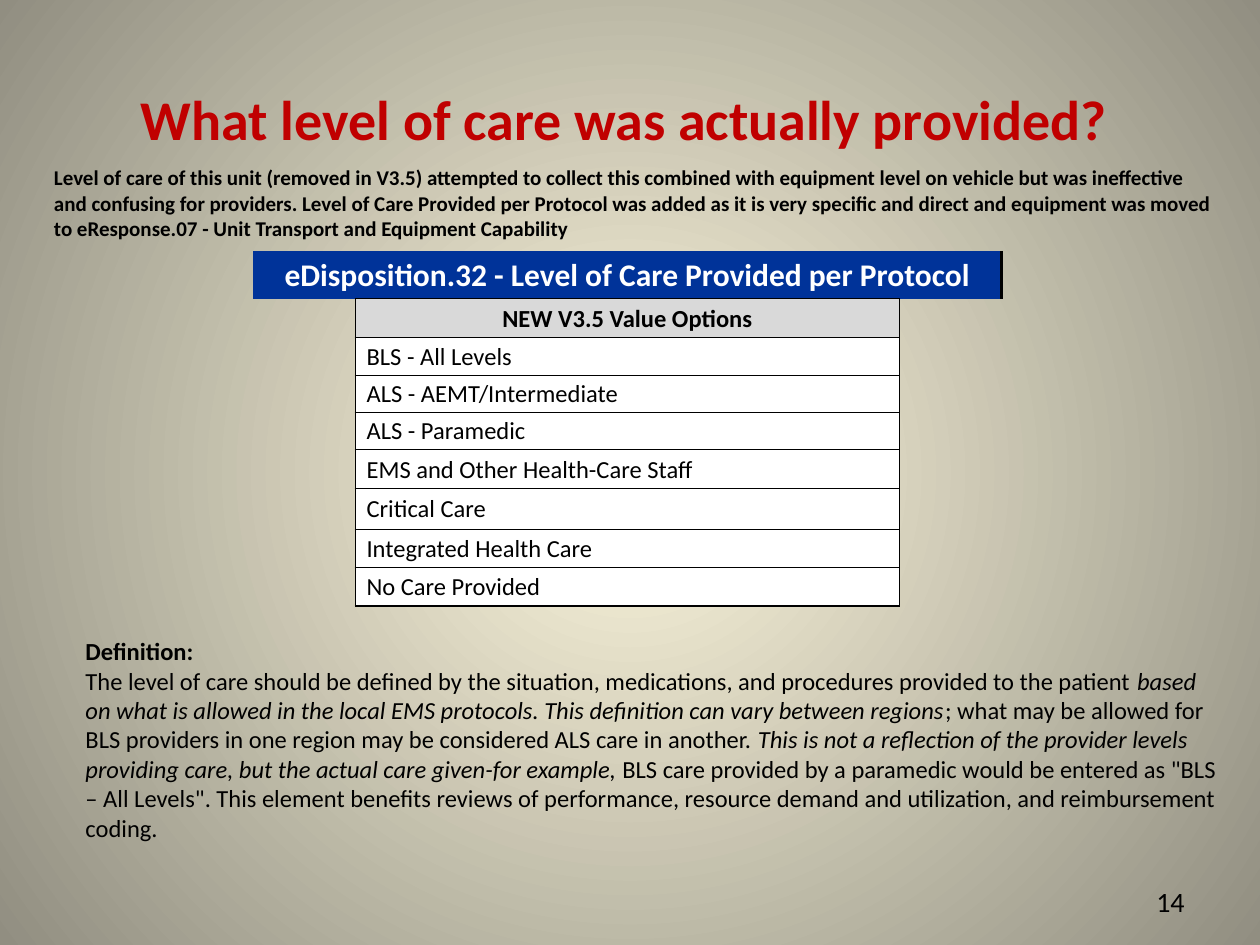
"""Build the slide on the level of care provided per protocol."""
from lxml import etree
from pptx import Presentation
from pptx.dml.color import RGBColor
from pptx.enum import text
from pptx.oxml import ns
from pptx.util import Inches, Pt

COLORS = {
    "center": "FCF7DD",
    "edge": "918E81",
    "title": "C00000",
    "text": "000000",
    "banner": "003399",
    "heading": "D9D9D9",
    "white": "FFFFFF",
}


def add_text(box, paragraphs, size, color="text", bold=False, align=text.PP_ALIGN.LEFT, wrap=True):
    """Add a text box; each paragraph is a list of runs, and every second run is italic."""
    frame = slide.shapes.add_textbox(*map(Inches, box)).text_frame
    frame.word_wrap = wrap
    for index, runs in enumerate(paragraphs):
        paragraph = frame.add_paragraph() if index else frame.paragraphs[0]
        paragraph.alignment = align
        paragraph.font.name = "Calibri"
        paragraph.font.size = Pt(size)
        paragraph.font.bold = bold
        paragraph.font.color.rgb = RGBColor.from_string(COLORS[color])
        for position, words in enumerate(runs):
            run = paragraph.add_run()
            run.text = words
            if position % 2:
                run.font.italic = True
    return frame


def set_borders(cell, **widths):
    """Draw black borders on the sides given as L, R, T or B, with widths in points."""
    properties = cell._tc.get_or_add_tcPr()
    sides = [side for side in "LRTB" if side in widths]
    for index, side in enumerate(sides):
        line = etree.Element(ns.qn(f"a:ln{side}"), w=str(Pt(widths[side])))
        fill = etree.SubElement(line, ns.qn("a:solidFill"))
        etree.SubElement(fill, ns.qn("a:srgbClr"), val=COLORS["text"])
        properties.insert(index, line)


presentation = Presentation()
presentation.slide_width, presentation.slide_height = Inches(10), Inches(7.5)
slide = presentation.slides.add_slide(presentation.slide_layouts[6])

background = slide.background.fill
background.gradient()
for stop, name in zip(background.gradient_stops, ("center", "edge")):
    stop.color.rgb = RGBColor.from_string(COLORS[name])
gradient = slide._element.find(".//" + ns.qn("a:gradFill"))
gradient.remove(gradient.find(ns.qn("a:lin")))
circle = etree.SubElement(gradient, ns.qn("a:path"), path="circle")
etree.SubElement(circle, ns.qn("a:fillToRect"), l="50000", t="50000", r="50000", b="50000")

number = add_text((7.17, 6.97, 2.33, 0.37), [["14"]], 16, align=text.PP_ALIGN.RIGHT)
number.vertical_anchor = text.MSO_ANCHOR.MIDDLE

definition = add_text((0.58, 5, 9.25, 1.75), [
    ["Definition:"],
    [
        "The level of care should be defined by the situation, medications, and procedures "
        "provided to the patient ",
        "based on what is allowed in the local EMS protocols. This definition can vary "
        "between regions",
        "; what may be allowed for BLS providers in one region may be considered ALS care "
        "in another. ",
        "This is not a reflection of the provider levels providing care, but the actual "
        "care given-for example,",
        " BLS care provided by a paramedic would be entered as \"BLS – All Levels\". This "
        "element benefits reviews of performance, resource demand and utilization, and "
        "reimbursement coding.",
    ],
], 14)
definition.paragraphs[0].font.bold = True

add_text((1.02, 0.62, 7.94, 0.64), [["What level of care was actually provided?"]], 32,
         color="title", bold=True, wrap=False)
add_text((0.33, 1.26, 9.42, 0.91), [[
    "Level of care of this unit (removed in V3.5) attempted to collect this combined with "
    "equipment level on vehicle but was ineffective and confusing for providers. Level of "
    "Care Provided per Protocol was added as it is very specific and direct and equipment "
    "was moved to eResponse.07 - Unit Transport and Equipment Capability"
]], 12, bold=True)

labels = [
    "eDisposition.32 - Level of Care Provided per Protocol",
    "NEW V3.5 Value Options",
    "BLS - All Levels",
    "ALS - AEMT/Intermediate",
    "ALS - Paramedic",
    "EMS and Other Health-Care Staff",
    "Critical Care",
    "Integrated Health Care",
    "No Care Provided",
]
column_widths = [0.81, 4.32, 0.81]
row_heights = [0.38, 0.31, 0.3, 0.29, 0.3, 0.31, 0.32, 0.3, 0.31]
table = slide.shapes.add_table(len(labels), 3, Inches(2.01), Inches(1.99),
                               Inches(5.94), Inches(2.82)).table
table.first_row = table.horz_banding = False
table._tbl.tblPr.find(ns.qn("a:tableStyleId")).text = "{2D5ABB26-0587-4C30-8999-92F81FD0307C}"
for column, width in zip(table.columns, column_widths):
    column.width = Inches(width)
for row, height in zip(table.rows, row_heights):
    row.height = Inches(height)
for cell in table.iter_cells():
    cell.fill.background()
    cell.margin_top = cell.margin_bottom = 0
    cell.text_frame.paragraphs[0].font.size = Pt(12)
table.cell(0, 0).merge(table.cell(0, 2))

for index, label in enumerate(labels):
    banner, heading = index == 0, index == 1
    cell = table.cell(index, 0 if banner else 1)
    cell.text = label
    cell.vertical_anchor = text.MSO_ANCHOR.MIDDLE
    cell.margin_left = Inches(0.01 if index < 2 else 0.09)
    cell.margin_right = cell.margin_top = Inches(0.01)
    cell.fill.solid()
    fill_name = "banner" if banner else "heading" if heading else "white"
    cell.fill.fore_color.rgb = RGBColor.from_string(COLORS[fill_name])
    paragraph = cell.text_frame.paragraphs[0]
    paragraph.alignment = text.PP_ALIGN.CENTER if index < 2 else text.PP_ALIGN.LEFT
    paragraph.font.name = "Calibri"
    paragraph.font.size = Pt(18 if banner else 14)
    paragraph.font.bold = index < 2
    paragraph.font.color.rgb = RGBColor.from_string(COLORS["white" if banner else "text"])
    if banner:
        set_borders(cell, R=1.5)
    else:
        last = index == len(labels) - 1
        set_borders(cell, L=1, R=1, T=1 if heading else 0.5, B=1 if last else 0.5)
        set_borders(table.cell(index, 2), L=1)

presentation.save("out.pptx")
